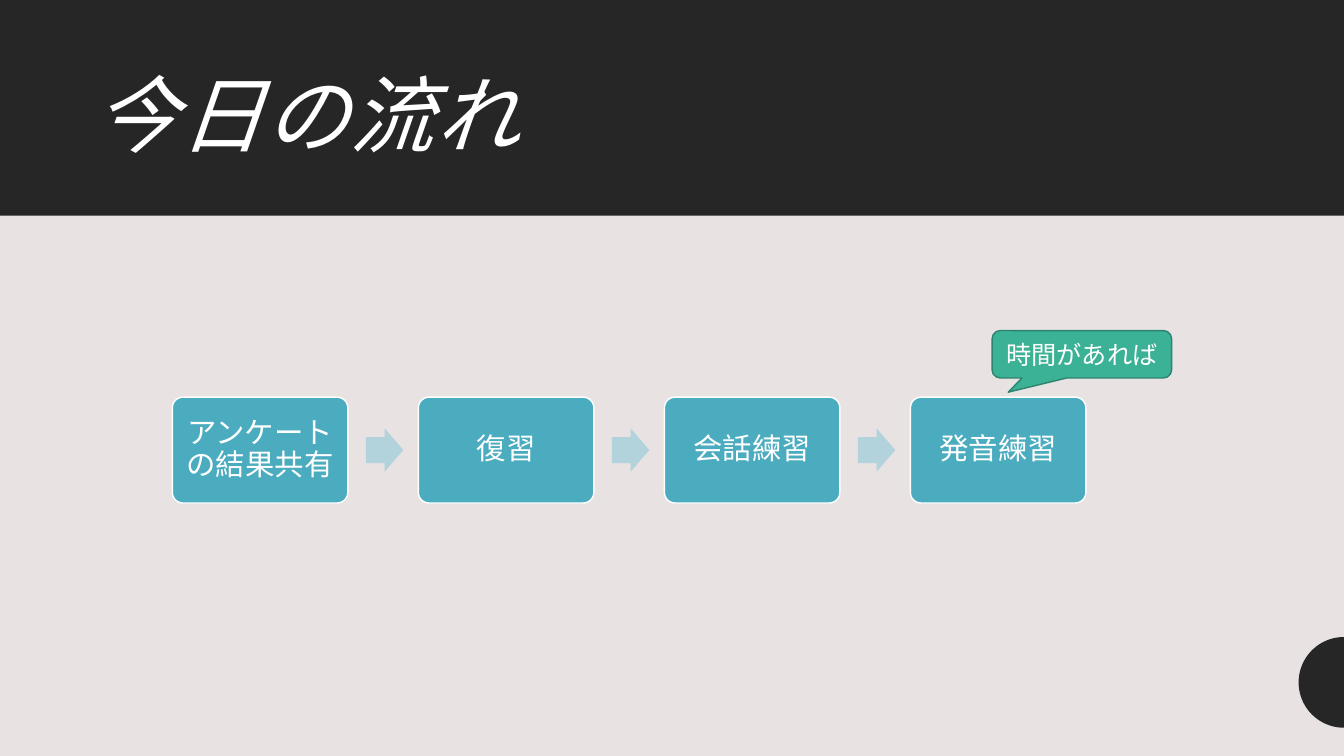
from math import cos, pi, sin

from pptx import Presentation
from pptx.dml.color import RGBColor
from pptx.enum.shapes import MSO_SHAPE
from pptx.enum.text import MSO_ANCHOR, MSO_AUTO_SIZE, PP_ALIGN
from pptx.util import Pt

PX = 9144
WIDE, HIGH = 1333, 750
COLORS = {
    "back": "E8E2E3",
    "dark": "262626",
    "white": "FFFFFF",
    "step": "4BACC0",
    "arrow": "B2D2DC",
    "note": "3BB195",
    "edge": "2C836E",
}
STEPS = ["アンケートの結果共有", "復習", "会話練習", "発音練習"]
LEFT, TOP, PITCH = 171, 394, 244


def tint(name):
    return RGBColor.from_string(COLORS[name])


def paint(shape, fill, line=None):
    shape.shadow.inherit = False
    shape.fill.solid()
    shape.fill.fore_color.rgb = tint(fill)
    if line:
        shape.line.color.rgb = tint(line)
        shape.line.width = Pt(1)
    else:
        shape.line.fill.background()


def add_box(slide, kind, box, adjust, fill, line=None):
    shape = slide.shapes.add_shape(kind, *[n * PX for n in box])
    for i, value in enumerate(adjust):
        shape.adjustments[i] = value
    paint(shape, fill, line)
    return shape


def write(shape, text, size, face="Arial", align=PP_ALIGN.CENTER, space=1.0):
    frame = shape.text_frame
    frame.text = text
    frame.word_wrap = True
    frame.auto_size = MSO_AUTO_SIZE.NONE
    frame.vertical_anchor = MSO_ANCHOR.MIDDLE
    para = frame.paragraphs[0]
    para.alignment = align
    para.line_spacing = space
    font = para.runs[0].font
    font.name, font.size = face, Pt(size)
    font.color.rgb = tint("white")
    return para.runs[0]


def add_title(slide, text):
    title = slide.shapes.title
    title.left, title.top = 83 * PX, 46 * PX
    title.width, title.height = 1167 * PX, 145 * PX
    run = write(title, text, 60, "Lato", PP_ALIGN.LEFT, 0.9)
    run.font.italic = True
    run.font._element.set("spc", "100")
    band = add_box(slide, MSO_SHAPE.RECTANGLE, (0, 0, WIDE, 214), [], "dark")
    title._element.addprevious(band._element)


def add_disc(slide, mid, radius):
    turns = [pi / 2 + pi * i / 48 for i in range(49)]
    dots = [(round((WIDE + radius * cos(a)) * PX),
             round((mid + radius * sin(a)) * PX)) for a in turns]
    pen = slide.shapes.build_freeform(*dots[0])
    pen.add_line_segments(dots[1:], close=True)
    paint(pen.convert_to_shape(), "dark")


def add_step(slide, left, text):
    box = (left, TOP, 174, 105)
    step = add_box(slide, MSO_SHAPE.ROUNDED_RECTANGLE, box, [0.1], "step", "white")
    write(step, text, 21, space=0.9)
    frame = step.text_frame
    frame.margin_left = frame.margin_right = 9 * PX
    frame.margin_top = frame.margin_bottom = 9 * PX


def add_arrow(slide, left):
    box = (left, TOP + 31, 37, 43)
    add_box(slide, MSO_SHAPE.RIGHT_ARROW, box, [0.6, 0.5], "arrow")


def add_note(slide, text):
    note = add_box(slide, MSO_SHAPE.ROUNDED_RECTANGULAR_CALLOUT,
                   (984, 328, 178, 47), [-0.41, 0.8, 0.17], "note", "edge")
    write(note, text, 18)


def main():
    deck = Presentation()
    deck.slide_width, deck.slide_height = WIDE * PX, HIGH * PX
    slide = deck.slides.add_slide(deck.slide_layouts[5])
    slide.background.fill.solid()
    slide.background.fill.fore_color.rgb = tint("back")
    add_title(slide, "今日の流れ")
    add_disc(slide, 677, 45)
    for i, text in enumerate(STEPS):
        left = LEFT + i * PITCH
        if i:
            add_arrow(slide, left - 52)
        add_step(slide, left, text)
    add_note(slide, "時間があれば")
    deck.save("out.pptx")


if __name__ == "__main__":
    main()
